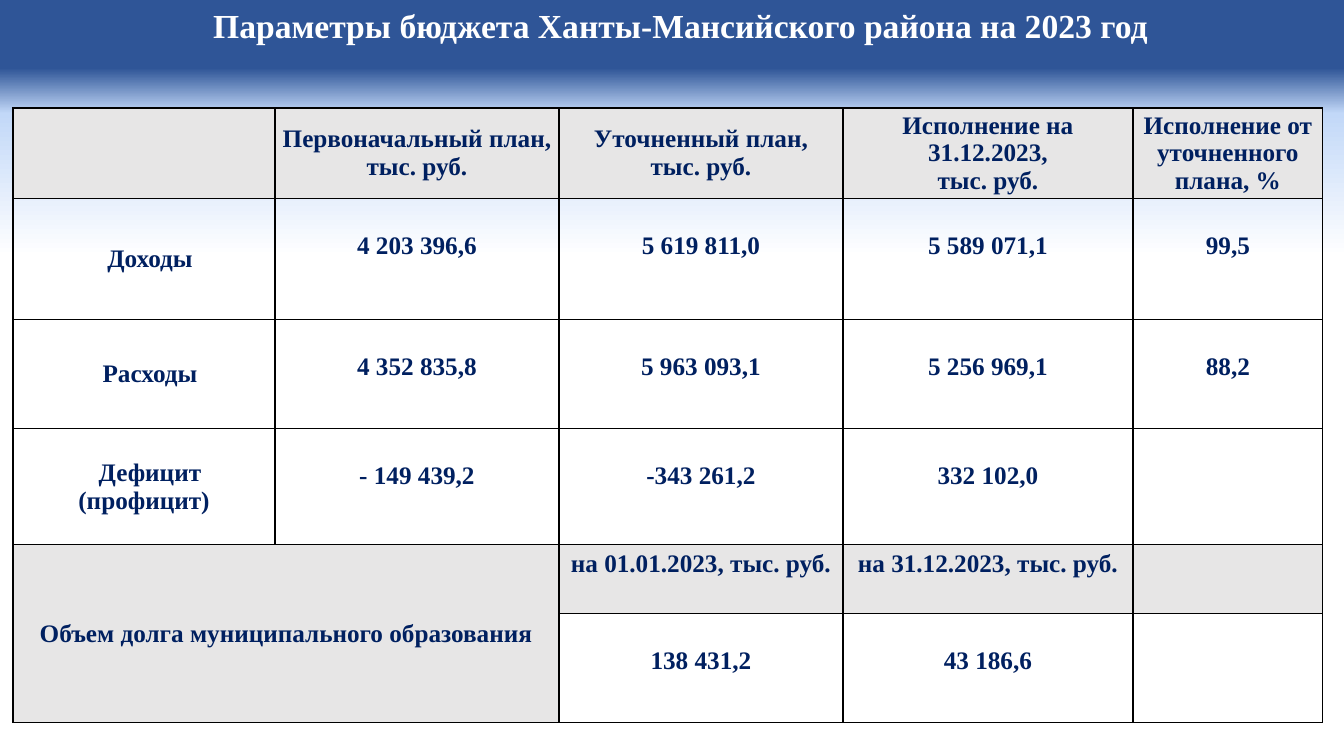
from copy import deepcopy
from dataclasses import dataclass

from lxml.etree import SubElement
from pptx import Presentation
from pptx.dml.color import RGBColor
from pptx.enum.text import MSO_ANCHOR, MSO_AUTO_SIZE, PP_ALIGN
from pptx.oxml.ns import qn
from pptx.util import Emu, Pt


@dataclass(frozen=True)
class Theme:
    font: str = "Times New Roman"
    title_size: int = 24
    table_size: int = 18
    border_width: int = 1
    white: str = "FFFFFF"
    navy: str = "002060"
    grey: str = "E7E6E6"
    border: str = "000000"
    backdrop: tuple = ((9, "2F5597"), (15, "C2D8F8"), (34, "FFFFFF"))


def px(n):
    return Emu(round(n * 914400 / 100.8))


def apply(obj, values):
    for name, value in values.items():
        setattr(obj, name, value)


LABEL = {"vertical_anchor": MSO_ANCHOR.MIDDLE, "margin_left": px(6), "margin_right": px(6),
         "margin_top": 0, "margin_bottom": 0}
ROW_LABEL = LABEL | {"margin_left": px(10), "margin_right": px(10)}
CAPTION = {"vertical_anchor": MSO_ANCHOR.TOP, "margin_top": px(5)}
VALUE = CAPTION | {"margin_top": px(33)}

COLUMNS = [262, 284, 284, 290, 190]
ROWS = [
    (90, LABEL, LABEL, ["", "Первоначальный план, тыс. руб.", "Уточненный план,\nтыс. руб.",
                        "Исполнение на 31.12.2023,\nтыс. руб.",
                        "Исполнение от уточненного плана, %"]),
    (121, ROW_LABEL, VALUE, ["Доходы", "4 203 396,6", "5 619 811,0", "5 589 071,1", "99,5"]),
    (109, ROW_LABEL, VALUE, ["Расходы", "4 352 835,8", "5 963 093,1", "5 256 969,1", "88,2"]),
    (116, ROW_LABEL, VALUE, ["Дефицит (профицит)", "- 149 439,2", "-343 261,2", "332 102,0", ""]),
    (69, LABEL, CAPTION, ["Объем долга муниципального образования", "",
                          "на 01.01.2023, тыс. руб.", "на 31.12.2023, тыс. руб.", ""]),
    (109, LABEL, VALUE, ["", "", "138 431,2", "43 186,6", ""]),
]
GREY_ROWS = (0, 4)
DEBT_CELLS = ((4, 0), (5, 1))


class Builder:
    def __init__(self, slide, theme):
        self.s = slide
        self.t = theme

    def background(self):
        fill = self.s.background.fill
        fill.gradient()
        fill.gradient_angle = 270
        stops = next(self.s.element.iter(qn("a:gsLst")))
        stops.append(deepcopy(stops[0]))
        for stop, (percent, color) in zip(fill.gradient_stops, self.t.backdrop):
            stop.position = percent / 100
            stop.color.rgb = RGBColor.from_string(color)

    def text(self, tf, text, size, color, indent=0):
        for i, line in enumerate(text.split("\n")):
            p = tf.paragraphs[0] if i == 0 else tf.add_paragraph()
            p.alignment = PP_ALIGN.CENTER
            if indent:
                p._p.get_or_add_pPr().set("indent", str(px(indent)))
            r = p.add_run()
            r.text = line
            apply(r.font, {"name": self.t.font, "size": Pt(size), "bold": True})
            r.font.color.rgb = RGBColor.from_string(color)

    def title(self, text, left, top, width, height):
        sp = self.s.shapes.add_textbox(px(left), px(top), px(width), px(height))
        tf = sp.text_frame
        apply(tf, {"word_wrap": True, "auto_size": MSO_AUTO_SIZE.SHAPE_TO_FIT_TEXT})
        self.text(tf, text, self.t.title_size, self.t.white)

    def table(self, left, top):
        frame = self.s.shapes.add_table(
            len(ROWS), len(COLUMNS), px(left), px(top),
            px(sum(COLUMNS)), px(sum(row[0] for row in ROWS)))
        tbl = frame.table
        apply(tbl, {"first_row": False, "horz_banding": False})
        for column, width in zip(tbl.columns, COLUMNS):
            column.width = px(width)
        for i, (height, label, value, texts) in enumerate(ROWS):
            tbl.rows[i].height = px(height)
            for j, text in enumerate(texts):
                style = value if j else label
                self.cell(tbl.cell(i, j), text, style, i in GREY_ROWS)
        first, last = DEBT_CELLS
        tbl.cell(*first).merge(tbl.cell(*last))
        self.borders(frame)

    def cell(self, cell, text, style, grey):
        apply(cell, style)
        if grey:
            cell.fill.solid()
            cell.fill.fore_color.rgb = RGBColor.from_string(self.t.grey)
        else:
            cell.fill.background()
        if text:
            indent = 12 if style is ROW_LABEL else 0
            self.text(cell.text_frame, text, self.t.table_size, self.t.navy, indent)

    def borders(self, frame):
        for props in frame.element.iter(qn("a:tcPr")):
            for i, side in enumerate(("lnL", "lnR", "lnT", "lnB")):
                ln = SubElement(props, qn(f"a:{side}"), w=str(Pt(self.t.border_width)))
                fill = SubElement(ln, qn("a:solidFill"))
                SubElement(fill, qn("a:srgbClr"), val=self.t.border)
                props.insert(i, ln)


def main():
    prs = Presentation()
    apply(prs, {"slide_width": px(1344), "slide_height": px(756)})
    b = Builder(prs.slides.add_slide(prs.slide_layouts[6]), Theme())
    b.background()
    b.title("Параметры бюджета Ханты-Мансийского района на 2023 год", 186, 0, 989, 50)
    b.table(13, 108)
    prs.save("out.pptx")


if __name__ == "__main__":
    main()
